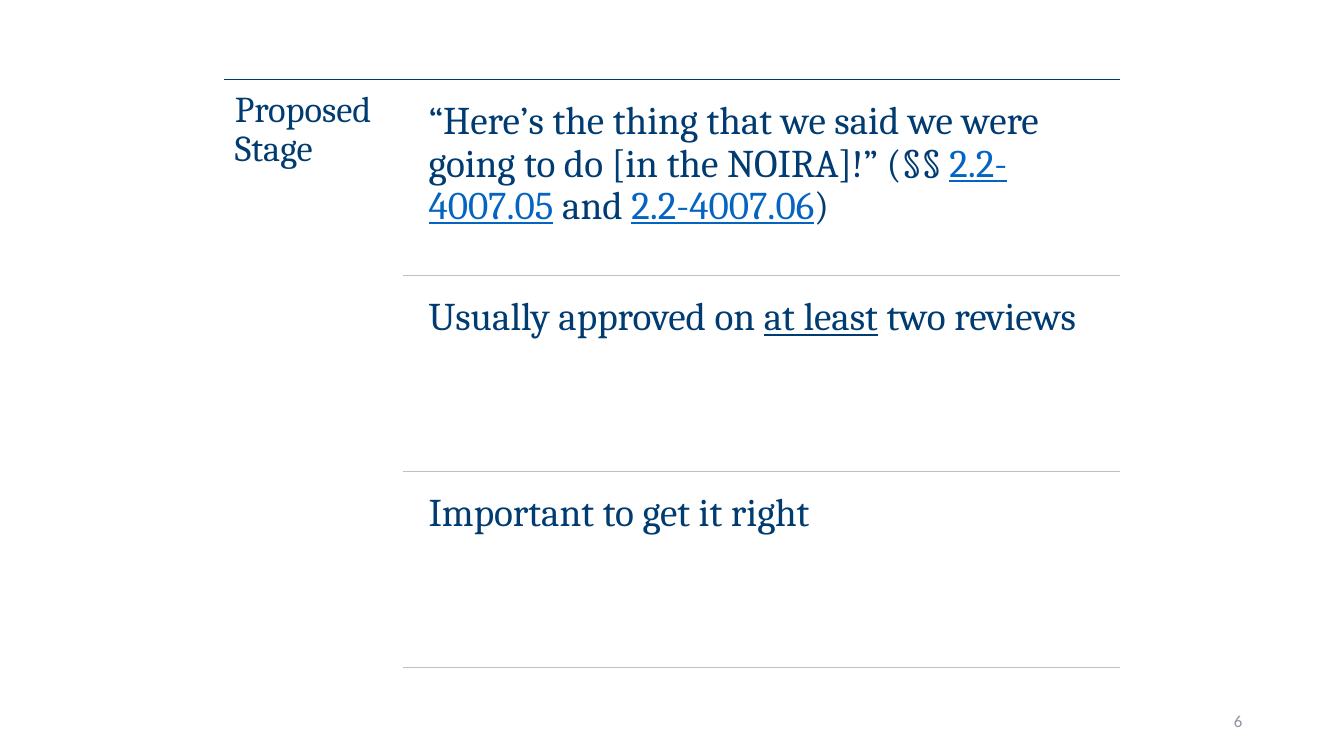
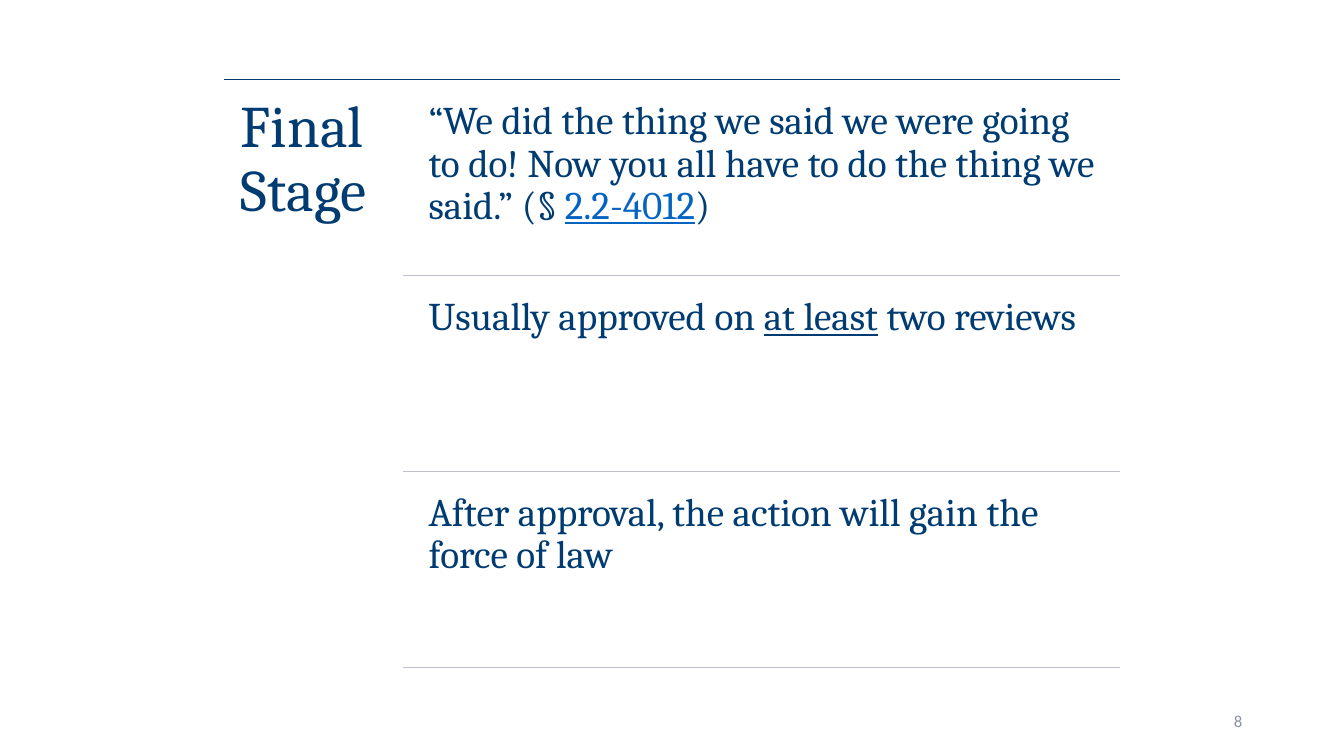
from lxml.etree import SubElement
from pptx import Presentation
from pptx.dml.color import RGBColor
from pptx.enum.shapes import MSO_CONNECTOR
from pptx.enum.text import MSO_ANCHOR, PP_ALIGN
from pptx.oxml.ns import qn
from pptx.util import Inches, Pt

NAVY, LINK_BLUE, RULE_GREY, NUMBER_GREY = "003C71", "0563C1", "BDC0C9", "8C92A5"
SERIF, SANS = "Cambria", "Calibri"

LEFT, RIGHT = 2.22, 11.11
TOP, BOTTOM = 0.79, 6.62
STAGE_WIDTH = 1.78
ROW_GAP = 0.09
POINT_LEFT = 4.13

# Each point is a list of (text, style) spans.
PLAIN, LINK, UNDERLINED = "plain", "link", "underlined"
REVIEWS = [("Usually approved on ", PLAIN), ("at least", UNDERLINED), (" two reviews", PLAIN)]
STAGES = [
    {
        "title": "Proposed Stage", "size": 26, "inset": 0.11, "number": 6,
        "points": [
            [("“Here’s the thing that we said we were going to do [in the NOIRA]!” (§§ ", PLAIN),
             ("2.2-4007.05", LINK), (" and ", PLAIN), ("2.2-4007.06", LINK), (")", PLAIN)],
            REVIEWS,
            [("Important to get it right", PLAIN)],
        ],
    },
    {
        "title": "Final Stage", "size": 42, "inset": 0.17, "number": 8,
        "points": [
            [("“We did the thing we said we were going to do! Now you all have to do "
              "the thing we said.” (§ ", PLAIN), ("2.2-4012", LINK), (")", PLAIN)],
            REVIEWS,
            [("After approval, the action will gain the force of law", PLAIN)],
        ],
    },
]


def rgb(color):
    return RGBColor.from_string(color)


def add_rule(page, left, top, color):
    """Draw a horizontal line from left to the right edge of the content."""
    rule = page.shapes.add_connector(
        MSO_CONNECTOR.STRAIGHT, Inches(left), Inches(top), Inches(RIGHT), Inches(top))
    rule.line.color.rgb = rgb(color)
    rule.line.width = Pt(1)
    SubElement(rule.element.spPr, qn("a:effectLst"))


def add_text(page, left, top, width, height, spans, size, inset=0.12,
             font=SERIF, color=NAVY):
    """Add a wrapped one-paragraph text box and return it."""
    box = page.shapes.add_textbox(Inches(left), Inches(top), Inches(width), Inches(height))
    frame = box.text_frame
    frame.word_wrap = True
    frame.margin_left = frame.margin_right = Inches(inset)
    frame.margin_top = frame.margin_bottom = Inches(inset)
    para = frame.paragraphs[0]
    para.line_spacing = 0.9
    for text, style in spans:
        span = para.add_run()
        span.text = text
        span.font.name = font
        span.font.size = Pt(size)
        span.font.color.rgb = rgb(LINK_BLUE if style == LINK else color)
        if style != PLAIN:
            span.font.underline = True
    return box


def add_page_number(page, number):
    box = add_text(page, 9.42, 6.95, 3, 0.4, [(str(number), PLAIN)], 12,
                   inset=0.05, font=SANS, color=NUMBER_GREY)
    frame = box.text_frame
    frame.margin_left = frame.margin_right = Inches(0.1)
    frame.vertical_anchor = MSO_ANCHOR.MIDDLE
    frame.paragraphs[0].alignment = PP_ALIGN.RIGHT
    frame.paragraphs[0].line_spacing = 1.0


def add_points(page, points):
    """Stack the points in equal rows, each closed by a grey rule."""
    pitch = (BOTTOM - TOP) / len(points)
    for index, spans in enumerate(points):
        row_top = TOP + index * pitch
        add_text(page, POINT_LEFT, row_top + ROW_GAP, RIGHT - POINT_LEFT,
                 pitch - ROW_GAP, spans, 28)
        add_rule(page, LEFT + STAGE_WIDTH, row_top + pitch, RULE_GREY)


def add_stage_page(deck, stage):
    page = deck.slides.add_slide(deck.slide_layouts[6])
    add_page_number(page, stage["number"])
    add_rule(page, LEFT, TOP, NAVY)
    add_text(page, LEFT, TOP, STAGE_WIDTH, BOTTOM + ROW_GAP - TOP,
             [(stage["title"], PLAIN)], stage["size"], stage["inset"])
    add_points(page, stage["points"])


def main():
    deck = Presentation()
    deck.slide_width, deck.slide_height = Inches(13.33), Inches(7.5)
    for stage in STAGES:
        add_stage_page(deck, stage)
    deck.save("out.pptx")


if __name__ == "__main__":
    main()
